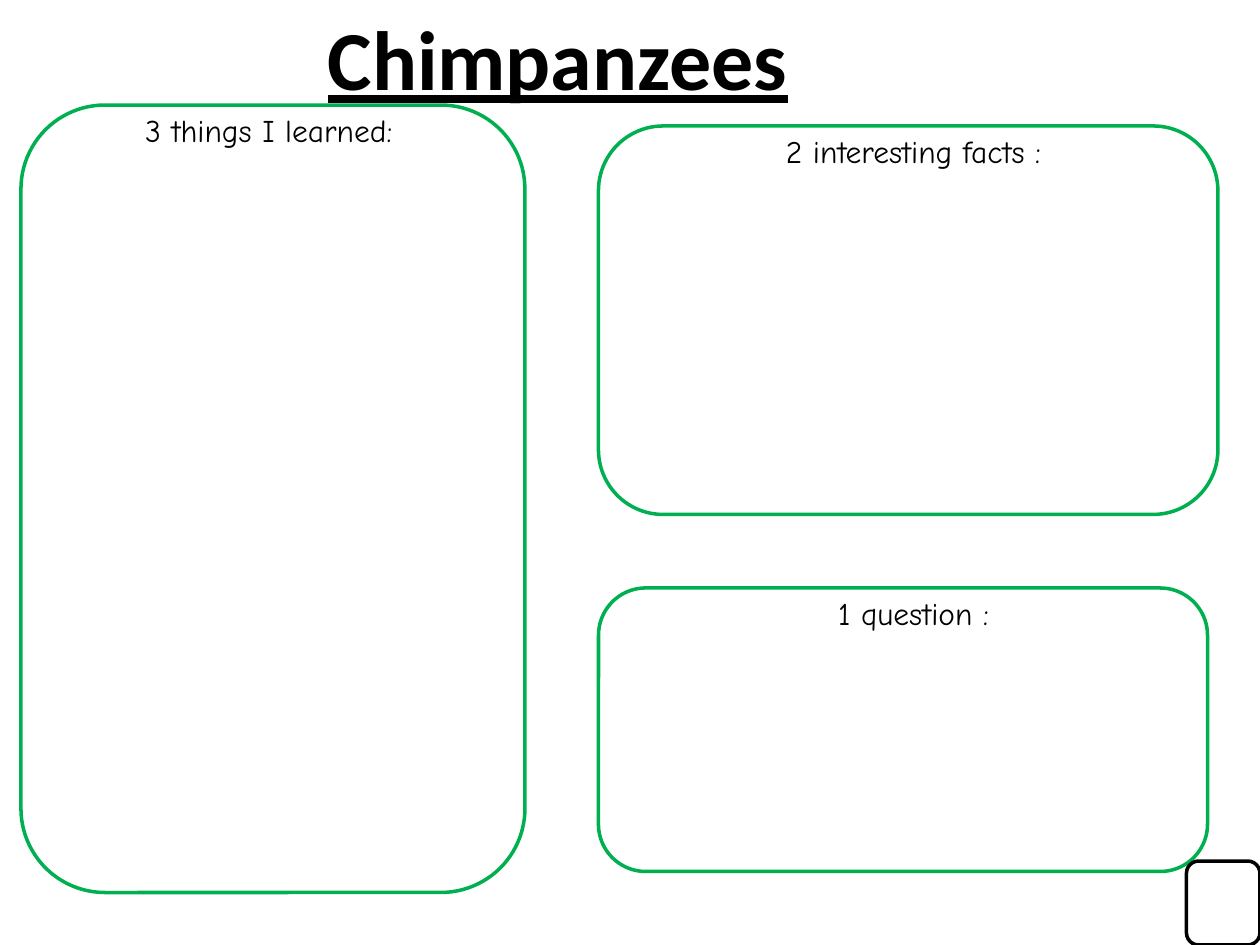
from pptx import Presentation
from pptx.dml.color import RGBColor as RGB
from pptx.enum.shapes import MSO_SHAPE as Shape
from pptx.enum.text import MSO_ANCHOR as Anchor, MSO_AUTO_SIZE as Fit, PP_ALIGN as Align
from pptx.util import Pt

GREEN, BLACK, WHITE = "00B050", "000000", "FFFFFF"


def paint(fmt, tone):
    fmt.solid()
    fmt.fore_color.rgb = RGB.from_string(tone)


def style(para, face, size, align):
    para.alignment = align
    para.font.name = face
    para.font.size = Pt(size)
    paint(para.font.fill, BLACK)


def panel(slide, box, tone):
    card = slide.shapes.add_shape(Shape.ROUNDED_RECTANGLE, *map(Pt, box))
    card.shadow.inherit = False
    paint(card.fill, WHITE)
    paint(card.line.fill, tone)
    card.line.width = Pt(2)


def label(slide, box, text, wrap=True):
    frame = slide.shapes.add_textbox(*map(Pt, box)).text_frame
    frame.word_wrap = wrap
    frame.auto_size = Fit.SHAPE_TO_FIT_TEXT
    frame.text = text
    style(frame.paragraphs[0], "Comic Neue", 18, Align.CENTER)


def heading(slide, box, text):
    title = slide.shapes.title
    title.left, title.top, title.width, title.height = map(Pt, box)
    frame = title.text_frame
    frame.text = text
    frame.word_wrap = False
    frame.auto_size = Fit.SHAPE_TO_FIT_TEXT
    frame.vertical_anchor = Anchor.TOP
    para = frame.paragraphs[0]
    style(para, "Calibri", 48, Align.LEFT)
    para.font.bold = para.font.underline = True


def main():
    deck = Presentation()
    deck.slide_width, deck.slide_height = Pt(720), Pt(540)
    slide = deck.slides.add_slide(deck.slide_layouts[5])

    for box in ((12, 60, 288, 450), (342, 72, 354, 222), (342, 336, 348, 162)):
        panel(slide, box, GREEN)
    label(slide, (67, 60, 173, 29), "3 things I learned:", wrap=False)
    for top, text in ((72, "2 interesting facts :"), (336, "1 question :")):
        label(slide, (342, top, 360, 29), text)
    heading(slide, (180, 0, 358, 65.4), "Chimpanzees")
    panel(slide, (678, 492, 42, 48), BLACK)

    deck.save("out.pptx")


if __name__ == "__main__":
    main()
